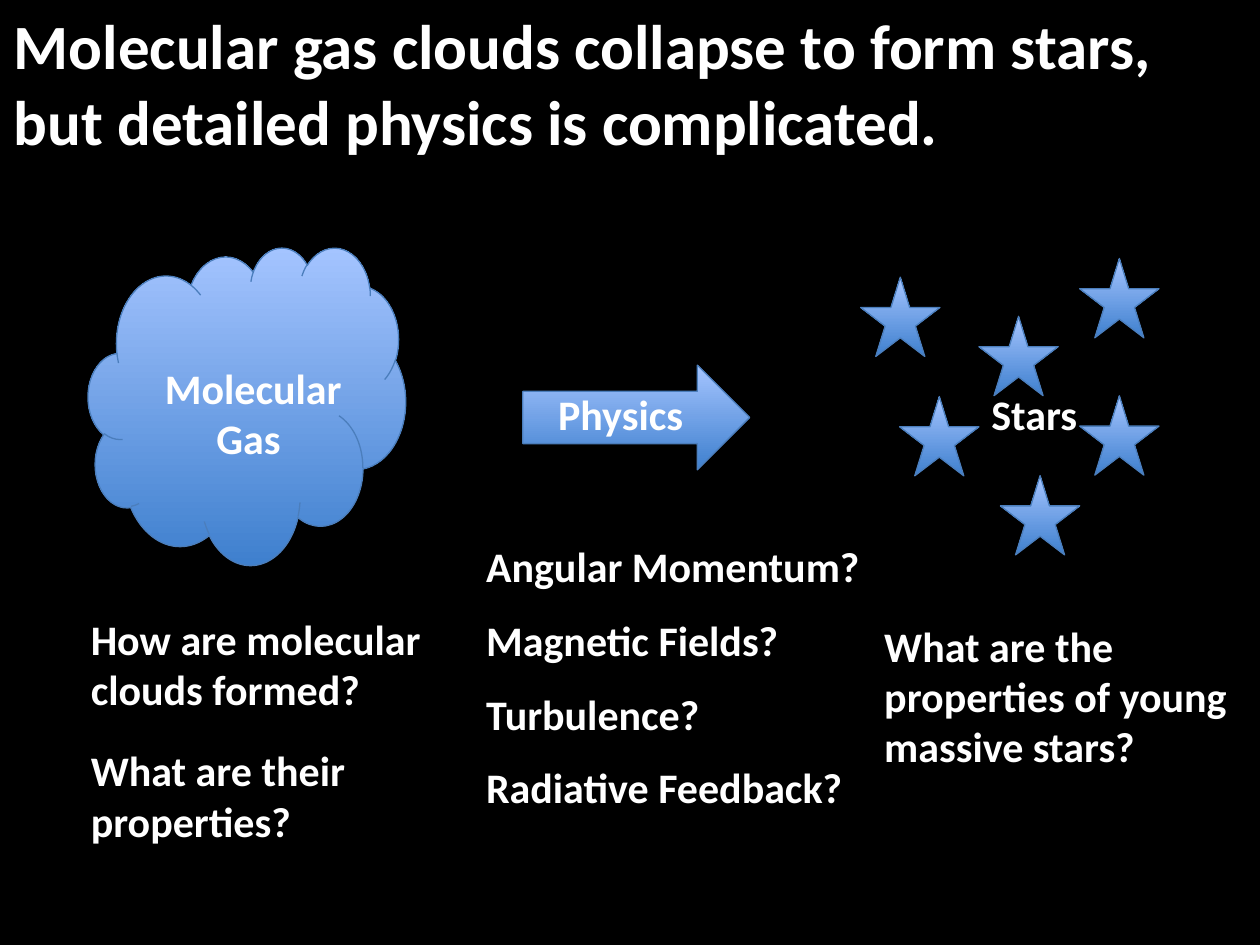
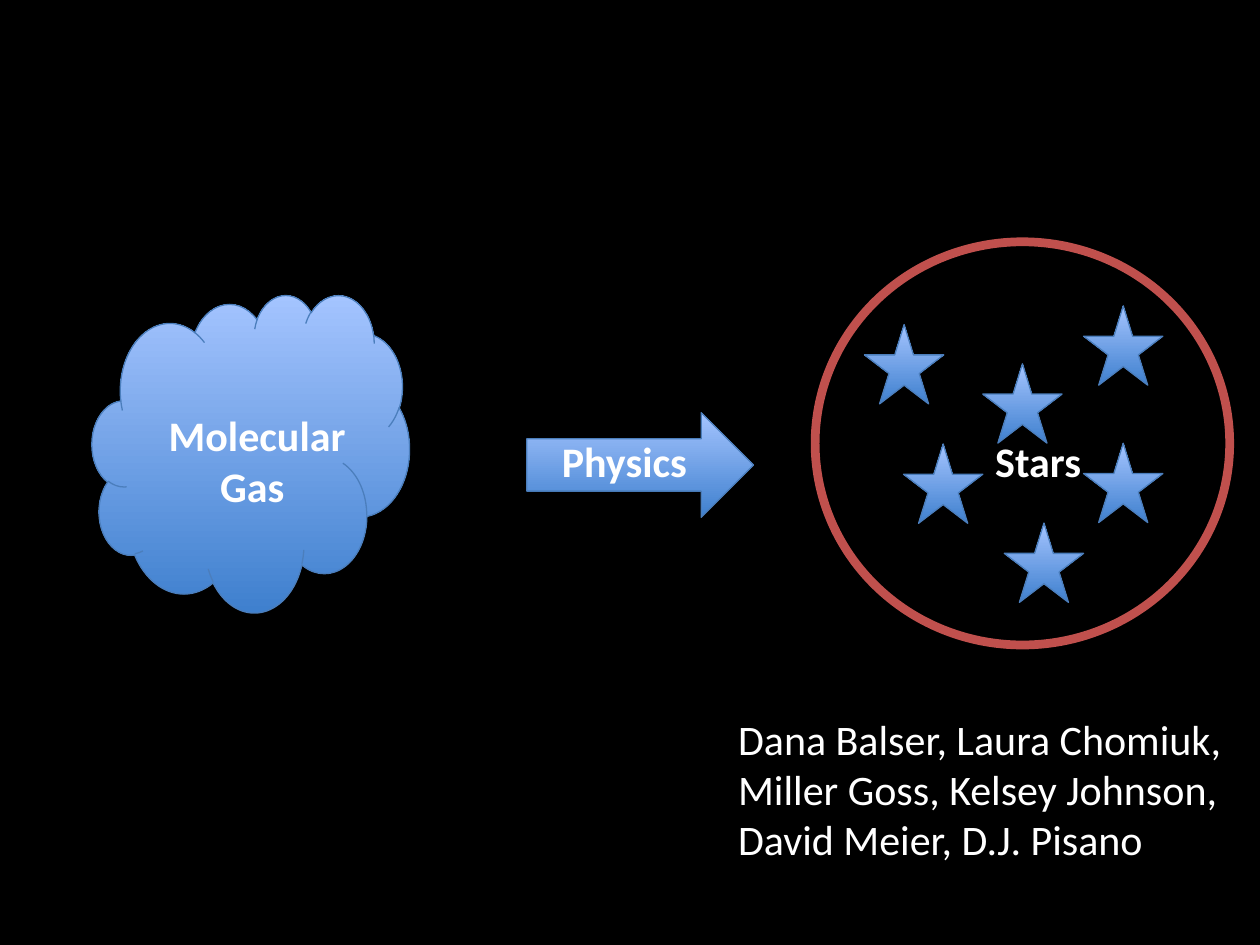
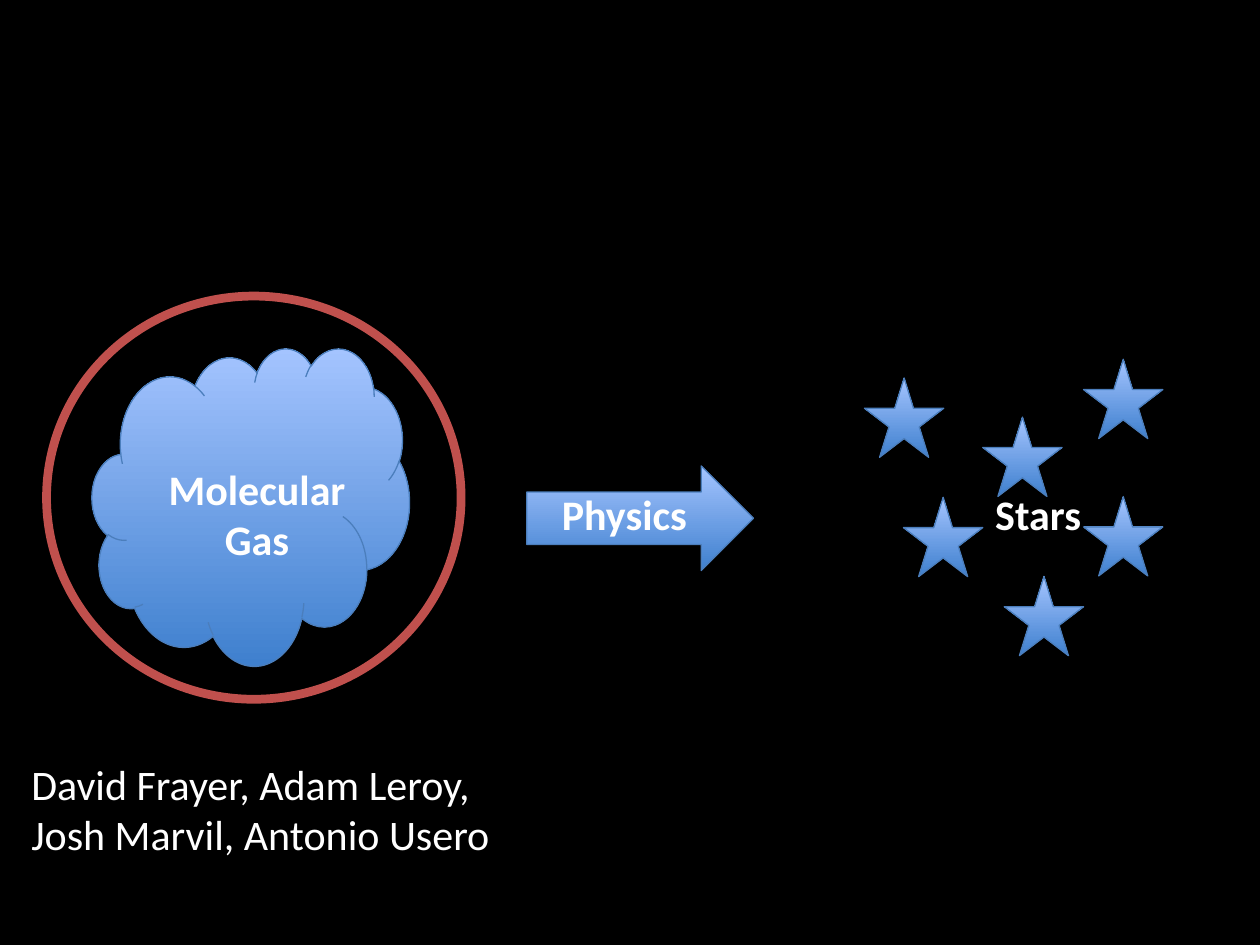
"""Build three slides on how gas clouds collapse to form stars."""
from pptx import Presentation
from pptx.dml.color import RGBColor
from pptx.enum.shapes import MSO_SHAPE
from pptx.enum.text import MSO_ANCHOR, MSO_AUTO_SIZE, PP_ALIGN
from pptx.util import Pt

BLACK = RGBColor(0x00, 0x00, 0x00)
WHITE = RGBColor(0xFF, 0xFF, 0xFF)
DEEP = RGBColor(0x3F, 0x80, 0xCE)
PALE = RGBColor(0xA4, 0xC4, 0xFF)
EDGE = RGBColor(0x4B, 0x7E, 0xBC)
RED = RGBColor(0xC0, 0x50, 0x4D)
FONT = "Calibri"
STAR = 45.36
STARS = [(441.4, 17.2), (463.7, 85.4), (521.3, 130.6),
         (509, 39.6), (566.6, 6.5), (566.6, 85)]
TOPICS = [("Angular Momentum?", 229.7), ("Magnetic Fields?", 183.6),
          ("Turbulence?", 137.5), ("Radiative Feedback?", 220.3)]


def write(frame, lines, size=24, bold=True, align=PP_ALIGN.LEFT):
    """Fill a text frame with one paragraph per line."""
    for num, line in enumerate(lines):
        para = frame.add_paragraph() if num else frame.paragraphs[0]
        para.alignment = align
        run = para.add_run()
        run.text = line
        font = run.font
        font.name, font.size, font.bold = FONT, Pt(size), bold
        font.color.rgb = WHITE


def label(slide, left, top, width, height, lines, wrap=False, **style):
    """Add a text box that grows with its lines."""
    box = slide.shapes.add_textbox(Pt(left), Pt(top), Pt(width), Pt(height))
    frame = box.text_frame
    frame.word_wrap = wrap
    frame.auto_size = MSO_AUTO_SIZE.SHAPE_TO_FIT_TEXT
    write(frame, lines, **style)


def outline(slide, kind, left, top, width, height, color, weight):
    """Add a preset shape with a plain outline and no shadow."""
    shape = slide.shapes.add_shape(kind, Pt(left), Pt(top), Pt(width), Pt(height))
    shape.shadow.inherit = False
    shape.line.color.rgb = color
    shape.line.width = Pt(weight)
    return shape


def solid(slide, kind, left, top, width, height):
    """Add a preset shape that fades from pale down to deep blue."""
    fill = outline(slide, kind, left, top, width, height, EDGE, 0.75).fill
    fill.gradient()
    fill.gradient_angle = 90
    for stop, color in zip(fill.gradient_stops, (DEEP, PALE)):
        stop.color.rgb = color


def ring(slide, left, top):
    """Add the red ring that marks one stage."""
    outline(slide, MSO_SHAPE.OVAL, left, top, 236.9, 230.4, RED, 5).fill.background()


def diagram(slide, left, top, gas=("Molecular ", "Gas ")):
    """Draw cloud, arrow and stars, placed from the cloud's corner."""
    solid(slide, MSO_SHAPE.CLOUD, left, top, 181.4, 181.4)
    solid(slide, MSO_SHAPE.RIGHT_ARROW, left + 248.4, top + 67.5, 129.6, 59.8)
    label(slide, left + 36, top + 62.4, 116.6, 65.4, gas, align=PP_ALIGN.CENTER)
    for across, down in STARS:
        solid(slide, MSO_SHAPE.STAR_5_POINT, left + across, top + down, STAR, STAR)
    label(slide, left + 509, top + 77, 64.1, 36, ["Stars"])
    label(slide, left + 261.4, top + 77, 86.4, 36, ["Physics"])


def heading(slide, text):
    """Place and fill the title placeholder."""
    title = slide.shapes.title
    title.left, title.top, title.width, title.height = Pt(0.7), Pt(0), Pt(719.3), Pt(94.3)
    frame = title.text_frame
    frame.word_wrap = True
    frame.auto_size = MSO_AUTO_SIZE.SHAPE_TO_FIT_TEXT
    frame.vertical_anchor = MSO_ANCHOR.MIDDLE
    write(frame, [text], size=36)


def main():
    """Build and save the deck."""
    deck = Presentation()
    deck.slide_width, deck.slide_height = Pt(720), Pt(540)
    ground = deck.slide_master.background.fill
    ground.solid()
    ground.fore_color.rgb = BLACK
    plain, blank = deck.slide_layouts[5], deck.slide_layouts[6]

    slide = deck.slides.add_slide(plain)
    heading(slide, "Molecular gas clouds collapse to form stars, "
                   "but detailed physics is complicated.")
    diagram(slide, 50.4, 141.2)
    for row, (topic, width) in enumerate(TOPICS):
        label(slide, 270.7, 305.3 + row * 42.2, width, 36, [topic])
    label(slide, 44.8, 347, 205.2, 65.4,
          ["How are molecular", "clouds formed?"], wrap=True)
    label(slide, 498.2, 350.8, 210.2, 94.5,
          ["What are the properties of young massive stars?"], wrap=True)
    label(slide, 44.8, 422, 205.2, 65.4, ["What are their properties?"], wrap=True)

    slide = deck.slides.add_slide(blank)
    diagram(slide, 52.6, 168.3)
    ring(slide, 465.8, 138.2)
    label(slide, 414.7, 403.9, 293, 94.5,
          ["Dana Balser, Laura Chomiuk,", "Miller Goss, Kelsey Johnson,",
           "David Meier, D.J. Pisano"], bold=False)

    slide = deck.slides.add_slide(blank)
    diagram(slide, 52.6, 198.8, gas=("Molecular", " Gas "))
    ring(slide, 26.6, 169.2)
    label(slide, 10.8, 429.8, 290.2, 65.4,
          ["David Frayer, Adam Leroy,", "Josh Marvil, Antonio Usero"], bold=False)

    deck.save("out.pptx")


if __name__ == "__main__":
    main()
